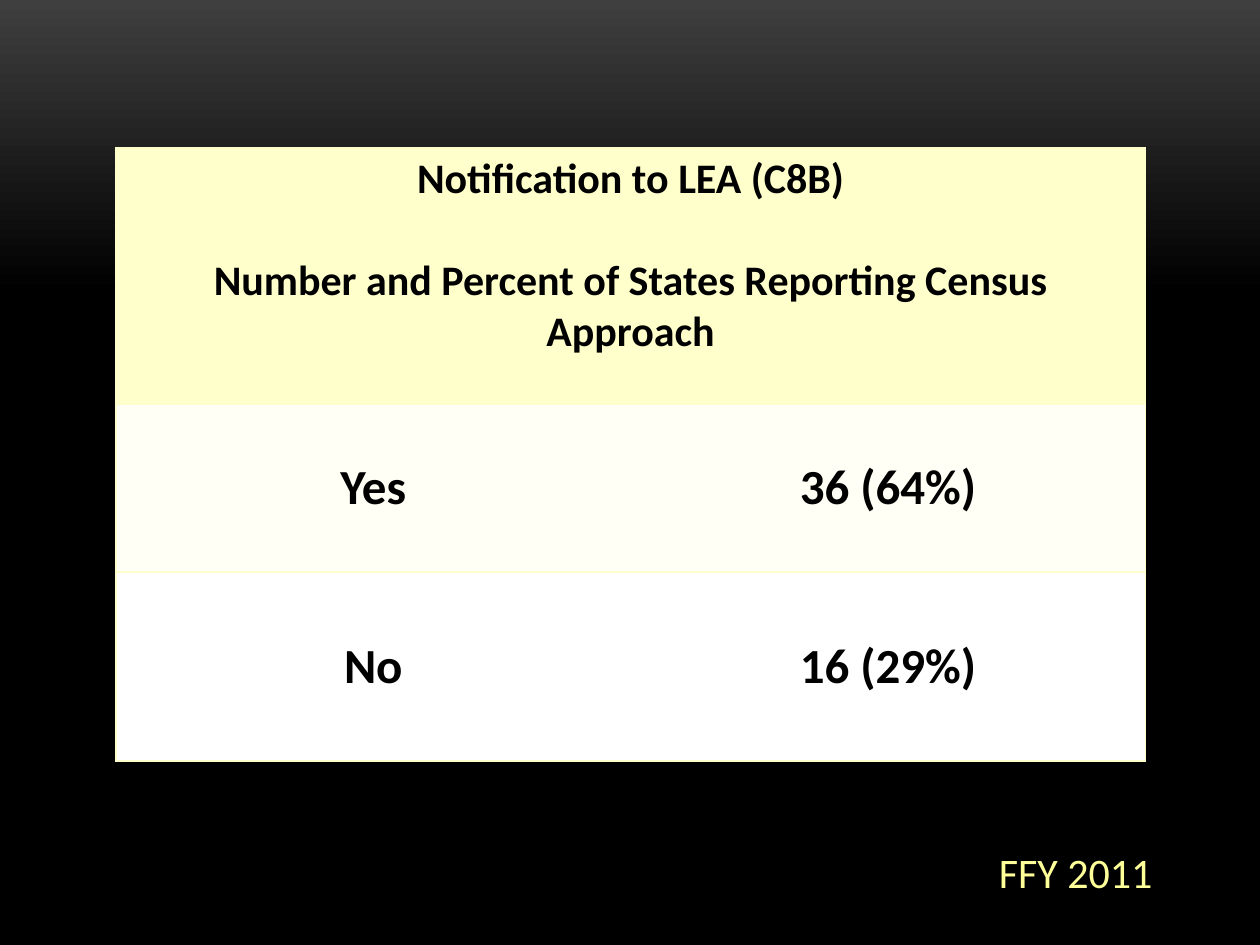
from lxml.etree import SubElement
from pptx import Presentation
from pptx.dml.color import RGBColor
from pptx.enum.text import MSO_ANCHOR, MSO_AUTO_SIZE, PP_ALIGN
from pptx.oxml.ns import qn
from pptx.util import Inches, Pt

BLACK, CREAM, PALE, WHITE = "000000", "FFFFCC", "FFFFF6", "FFFFFF"
HEADER = ("Notification to LEA (C8B)",
          "Number and Percent of States Reporting Census Approach")
ROWS = [("Yes", "36 (64%)", PALE), ("No", "16 (29%)", WHITE)]
ROW_HEIGHTS = (2.04, 1.33, 1.5)


def rgb(value):
    return RGBColor.from_string(value)


def set_background(s):
    fill = s.background.fill
    fill.gradient()
    fill.gradient_angle = 270
    for stop, (position, color) in zip(fill.gradient_stops,
                                       ((0, "3F3F3F"), (0.31, BLACK))):
        stop.position = position
        stop.color.rgb = rgb(color)


def format_text(p, size, color, bold=False):
    for r in p.runs:
        font = r.font
        font.name, font.size, font.bold = "Calibri", Pt(size), bold
        font.color.rgb = rgb(color)


def set_borders(cell, sides):
    """Draw the listed sides (of L, R, T, B) and clear the others."""
    tc_pr = cell._tc.get_or_add_tcPr()
    for side in "LRTB":
        ln = SubElement(tc_pr, qn(f"a:ln{side}"), w=str(Pt(1)))
        if side in sides:
            fill = SubElement(ln, qn("a:solidFill"))
            SubElement(fill, qn("a:srgbClr"), val=CREAM)
        else:
            SubElement(ln, qn("a:noFill"))


def fill_cell(cell, paragraphs, size):
    tf = cell.text_frame
    tf.text = "\n".join(paragraphs)
    for p in tf.paragraphs:
        p.alignment = PP_ALIGN.CENTER
        format_text(p, size, BLACK, bold=True)


def add_census_table(s, left, top, width):
    shape = s.shapes.add_table(len(ROW_HEIGHTS), 2, left, top, width,
                               Inches(sum(ROW_HEIGHTS)))
    table = shape.table
    for row, height in zip(table.rows, ROW_HEIGHTS):
        row.height = Inches(height)
    fills = [CREAM] + [color for *_, color in ROWS]
    for i, color in enumerate(fills):
        for j, sides in enumerate(("LTB", "RTB")):
            cell = table.cell(i, j)
            set_borders(cell, sides if i else "LRTB")
            cell.fill.solid()
            cell.fill.fore_color.rgb = rgb(color)

    header = table.cell(0, 0)
    header.merge(table.cell(0, 1))
    fill_cell(header, HEADER, 24)
    header.text_frame.paragraphs[1].space_before = Pt(29)

    for i, (label, value, _) in enumerate(ROWS, 1):
        for j, text in enumerate((label, value)):
            cell = table.cell(i, j)
            fill_cell(cell, [text], 28)
            cell.vertical_anchor = MSO_ANCHOR.MIDDLE
            cell.margin_left = cell.margin_right = Inches(0.07)
            cell.margin_top = cell.margin_bottom = 0


def add_year(s, left, top, width, height):
    tf = s.shapes.add_textbox(left, top, width, height).text_frame
    tf.word_wrap = False
    tf.auto_size = MSO_AUTO_SIZE.SHAPE_TO_FIT_TEXT
    tf.text = "FFY 2011"
    format_text(tf.paragraphs[0], 24, "FFFF99")


def main():
    prs = Presentation()
    prs.slide_width, prs.slide_height = Inches(10), Inches(7.5)
    s = prs.slides.add_slide(prs.slide_layouts[6])
    set_background(s)
    add_census_table(s, Inches(0.92), Inches(1.17), Inches(8.17))
    add_year(s, Inches(7.83), Inches(6.67), Inches(1.43), Inches(0.5))
    prs.save("out.pptx")


if __name__ == "__main__":
    main()
